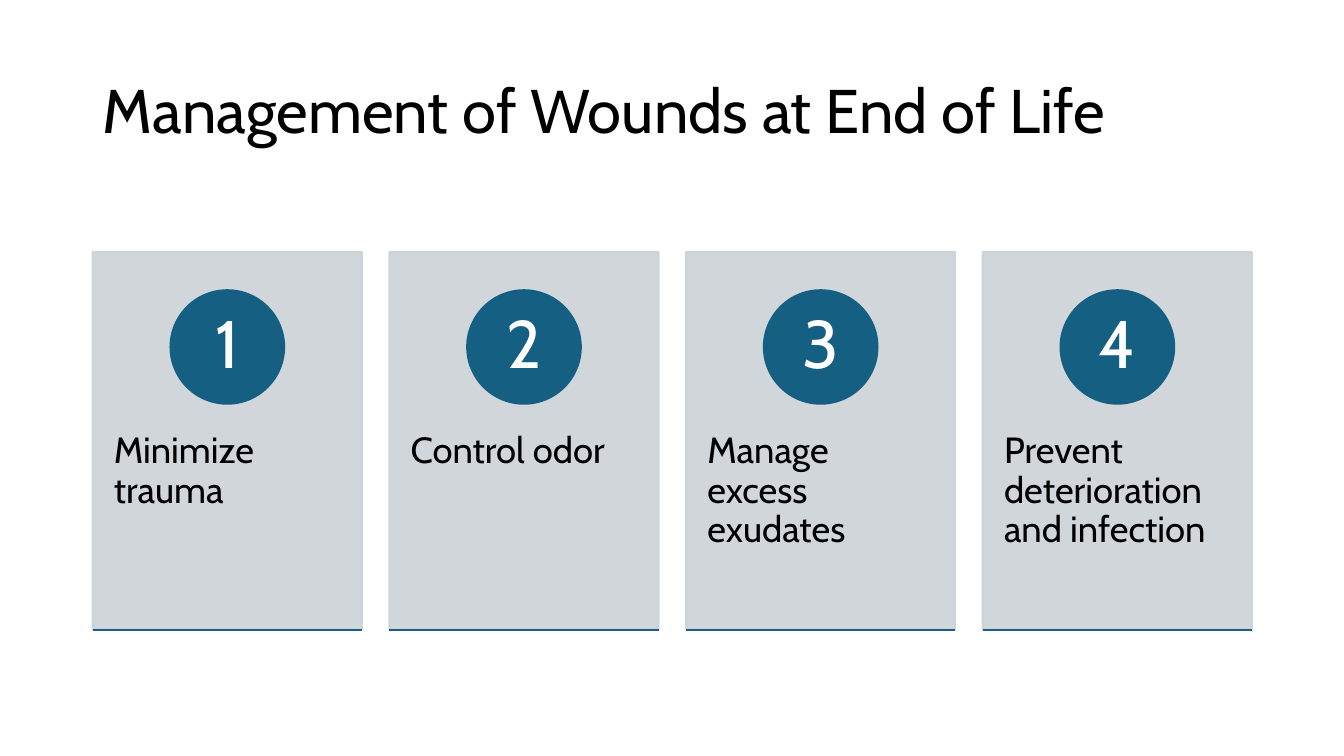
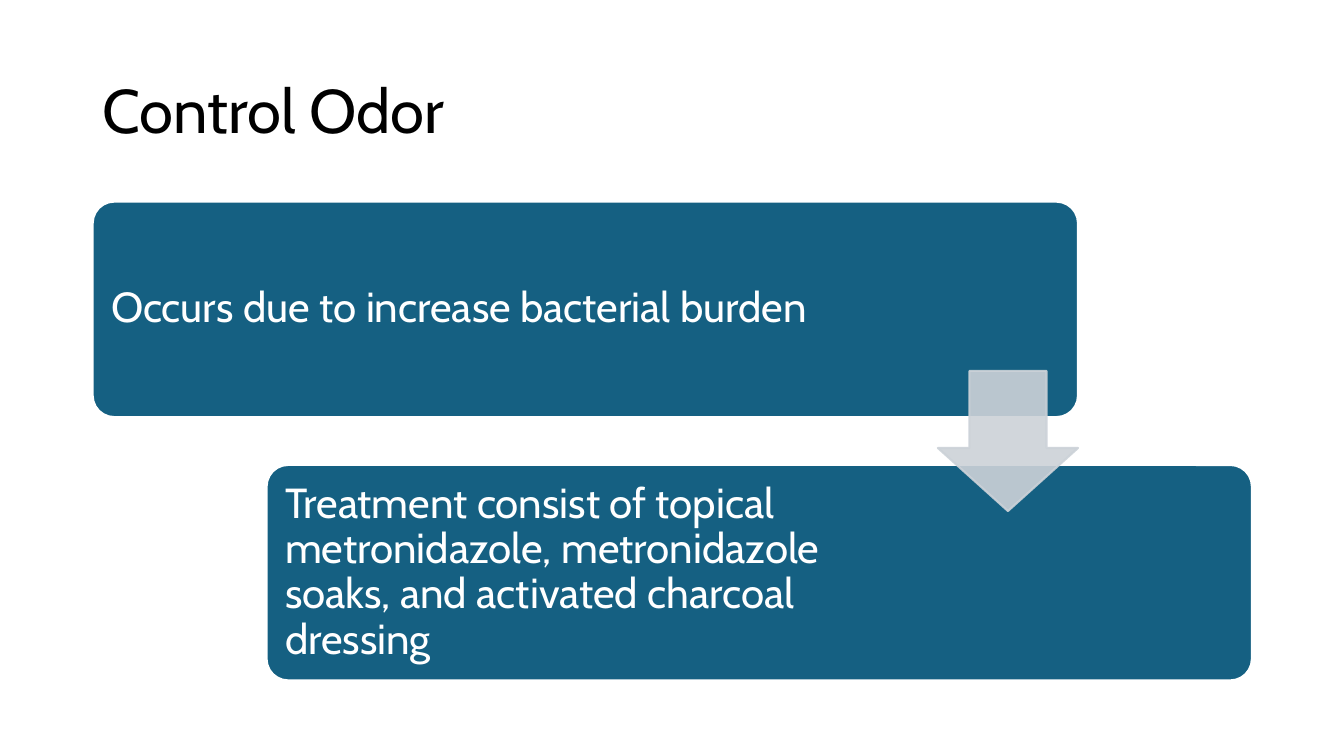
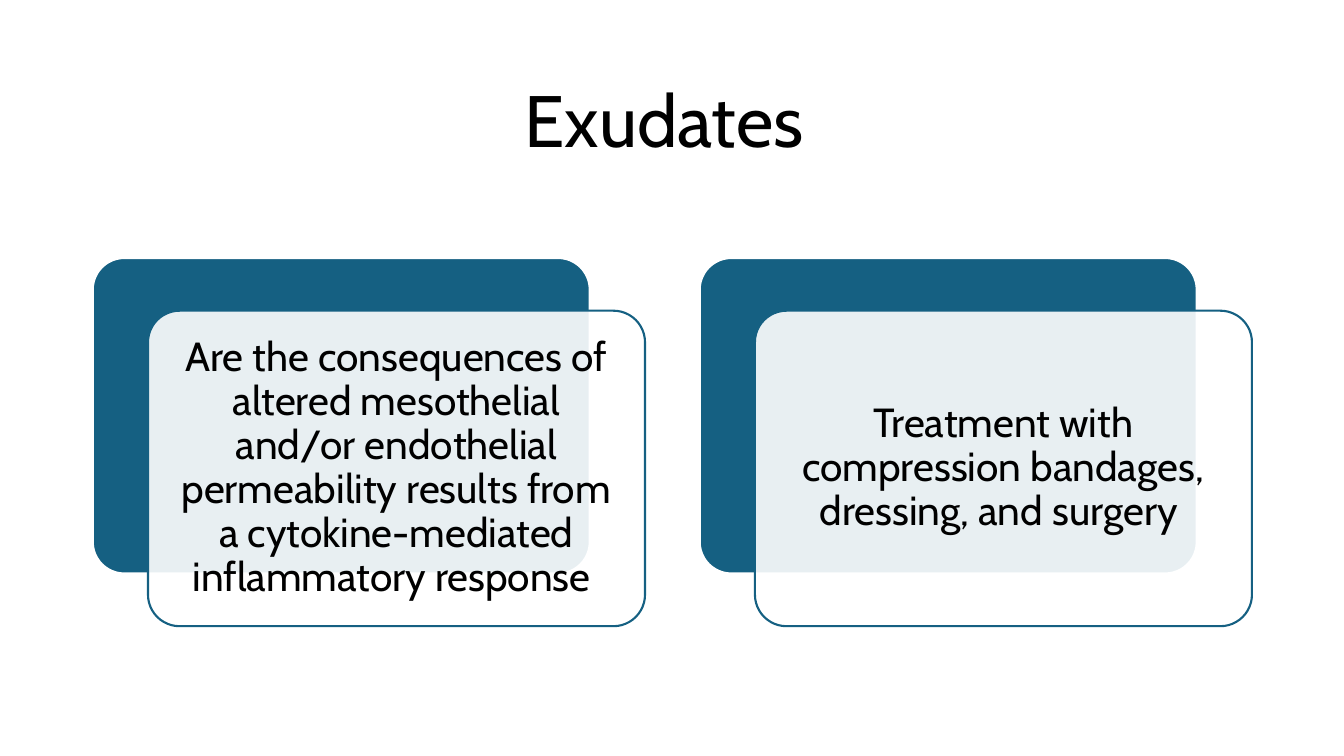
import dataclasses

import pptx
import pptx.dml.color
import pptx.enum.shapes
import pptx.enum.text
import pptx.oxml.ns
import pptx.util
from lxml import etree

SHAPE = pptx.enum.shapes.MSO_SHAPE
ALIGN = pptx.enum.text.PP_ALIGN
ANCHOR = pptx.enum.text.MSO_ANCHOR
qn = pptx.oxml.ns.qn


@dataclasses.dataclass(frozen=True)
class Theme:
    """Colours, type sizes and the shared column, in percent of the slide."""
    font: str = "Cabin"
    ink: str = "000000"
    paper: str = "FFFFFF"
    teal: str = "156082"
    grey: str = "CCD2D8"
    title: int = 44
    big_title: int = 52
    number: int = 48
    panel: int = 30
    frame: int = 29
    card: int = 26
    line: float = 1.5
    opacity: int = 90
    left: float = 6.9
    width: float = 86.25
    inset: tuple = (0.9, 1.6, 0.9, 1.6)


class Slides:
    """Holds the theme and the current page; lengths are percent of the slide."""

    def __init__(self, theme):
        self.theme = theme
        self.deck = pptx.Presentation()
        self.deck.slide_width = pptx.util.Inches(13.33)
        self.deck.slide_height = pptx.util.Inches(7.5)
        self.page = None

    def across(self, share):
        return round(self.deck.slide_width * share / 100)

    def down(self, share):
        return round(self.deck.slide_height * share / 100)

    def place(self, x, y, width, height):
        return self.across(x), self.down(y), self.across(width), self.down(height)

    def color(self, value):
        return pptx.dml.color.RGBColor.from_string(value)

    def set_text(self, shape, text, size, color, align=ALIGN.LEFT,
                 anchor=ANCHOR.MIDDLE, inset=None):
        frame = shape.text_frame
        frame.text = text
        frame.word_wrap = True
        frame.auto_size = pptx.enum.text.MSO_AUTO_SIZE.NONE
        frame.vertical_anchor = anchor
        if inset:
            frame.margin_left, frame.margin_right = map(self.across, inset[::2])
            frame.margin_top, frame.margin_bottom = map(self.down, inset[1::2])
        para = frame.paragraphs[0]
        para.alignment = align
        para.line_spacing = 0.9
        font = para.runs[0].font
        font.name = self.theme.font
        font.size = pptx.util.Pt(size)
        font.color.rgb = self.color(color)

    def add_page(self, title, size, align=ALIGN.LEFT, top=5.33, height=19.33):
        self.page = self.deck.slides.add_slide(self.deck.slide_layouts[5])
        box = self.page.shapes.title
        box.left, box.top, box.width, box.height = self.place(
            self.theme.left, top, self.theme.width, height)
        self.set_text(box, title, size, self.theme.ink, align)

    def fade(self, parent):
        """Makes the solid fill directly inside parent slightly transparent."""
        color = parent.find(qn("a:solidFill"))[0]
        alpha = etree.SubElement(color, qn("a:alpha"))
        alpha.set("val", str(self.theme.opacity * 1000))

    def add_shape(self, kind, place, fill, line, adjust=(),
                  fade_fill=False, fade_line=False):
        shape = self.page.shapes.add_shape(kind, *self.place(*place))
        shape.shadow.inherit = False
        shape.fill.solid()
        shape.fill.fore_color.rgb = self.color(fill)
        shape.line.color.rgb = self.color(line)
        shape.line.width = pptx.util.Pt(self.theme.line)
        for index, value in enumerate(adjust):
            shape.adjustments[index] = value
        properties = shape.element.spPr
        if fade_fill:
            self.fade(properties)
        if fade_line:
            self.fade(properties.find(qn("a:ln")))
        return shape

    def add_rule(self, x, y, width):
        rule = self.page.shapes.add_connector(
            pptx.enum.shapes.MSO_CONNECTOR.STRAIGHT, self.across(x),
            self.down(y), self.across(x + width), self.down(y))
        rule.line.color.rgb = self.color(self.theme.teal)
        rule.line.width = pptx.util.Pt(self.theme.line)
        etree.SubElement(rule.element.spPr, qn("a:effectLst"))

    def add_card(self, number, text, x, width):
        theme, top, height = self.theme, 33.33, 49.95
        card = self.add_shape(SHAPE.RECTANGLE, (x, top, width, height),
                              theme.grey, theme.grey,
                              fade_fill=True, fade_line=True)
        self.set_text(card, text, theme.card, theme.ink, anchor=ANCHOR.TOP,
                      inset=(1.58, 23.87, 1.58, 4.8))
        badge_width = 8.45
        badge = self.add_shape(
            SHAPE.OVAL, (x + (width - badge_width) / 2, 38.4, badge_width, 15),
            theme.teal, theme.teal)
        self.set_text(badge, str(number), theme.number, theme.paper,
                      ALIGN.CENTER, inset=(0.68, 0.13, 0.68, 0.13))
        self.add_rule(x, top + height, width)

    def add_panel(self, place):
        return self.add_shape(SHAPE.ROUNDED_RECTANGLE, place,
                              self.theme.teal, self.theme.paper, (0.1,))

    def add_frame(self, text, x, y, width, height, shift):
        """A solid panel with a shifted, see-through frame over it."""
        theme = self.theme
        self.add_panel((x, y, width, height))
        front = self.add_shape(
            SHAPE.ROUNDED_RECTANGLE, (x + shift[0], y + shift[1], width, height),
            theme.paper, theme.teal, (0.1,), fade_fill=True)
        self.set_text(front, text, theme.frame, theme.ink, ALIGN.CENTER,
                      inset=theme.inset)


def management(slides):
    theme = slides.theme
    slides.add_page("Management of Wounds at End of Life ", theme.title)
    goals = ("Minimize trauma", "Control odor ", "Manage excess exudates ",
             "Prevent deterioration and infection ")
    gap = 2.05
    width = (theme.width - gap * (len(goals) - 1)) / len(goals)
    for index, goal in enumerate(goals):
        slides.add_card(index + 1, goal, theme.left + index * (width + gap), width)


def odor(slides):
    theme = slides.theme
    slides.add_page("Control Odor ", theme.title)
    width, height, tops = theme.width * 0.85, 28.5, (26.67, 61.5)
    # Each step: text and the room kept free on its right
    steps = (("Occurs due to increase bacterial burden ", 16.65),
             ("Treatment consist of topical metronidazole, metronidazole soaks, "
              "and activated charcoal dressing ", 24.38))
    for index, (text, free) in enumerate(steps):
        x = theme.left + index * (theme.width - width)
        panel = slides.add_panel((x, tops[index], width, height))
        slides.set_text(panel, text, theme.panel, theme.paper,
                        inset=(0.9, 1.6, free, 1.6))
    # Arrow centred on the gap, flush with the first panel
    arrow_width, arrow_height = 10.43, 18.53
    middle = (tops[0] + height + tops[1]) / 2
    slides.add_shape(
        SHAPE.DOWN_ARROW,
        (theme.left + width - arrow_width, middle - arrow_height / 2,
         arrow_width, arrow_height),
        theme.grey, theme.grey, (0.55, 0.45), fade_fill=True, fade_line=True)


def exudates(slides):
    theme = slides.theme
    slides.add_page("Exudates ", theme.big_title, ALIGN.CENTER, 8.13, 16.53)
    facts = ("Are the consequences of altered mesothelial and/or endothelial "
             "permeability results from a cytokine-mediated inflammatory response ",
             "Treatment with compression bandages, dressing, and surgery ")
    width, shift = 36.98, (4.11, 6.97)
    pitch = theme.width - width - shift[0]
    for index, fact in enumerate(facts):
        slides.add_frame(fact, theme.left + index * pitch, 34.13, width, 41.73, shift)


def main():
    slides = Slides(Theme())
    for build in (management, odor, exudates):
        build(slides)
    slides.deck.save("out.pptx")


if __name__ == "__main__":
    main()
